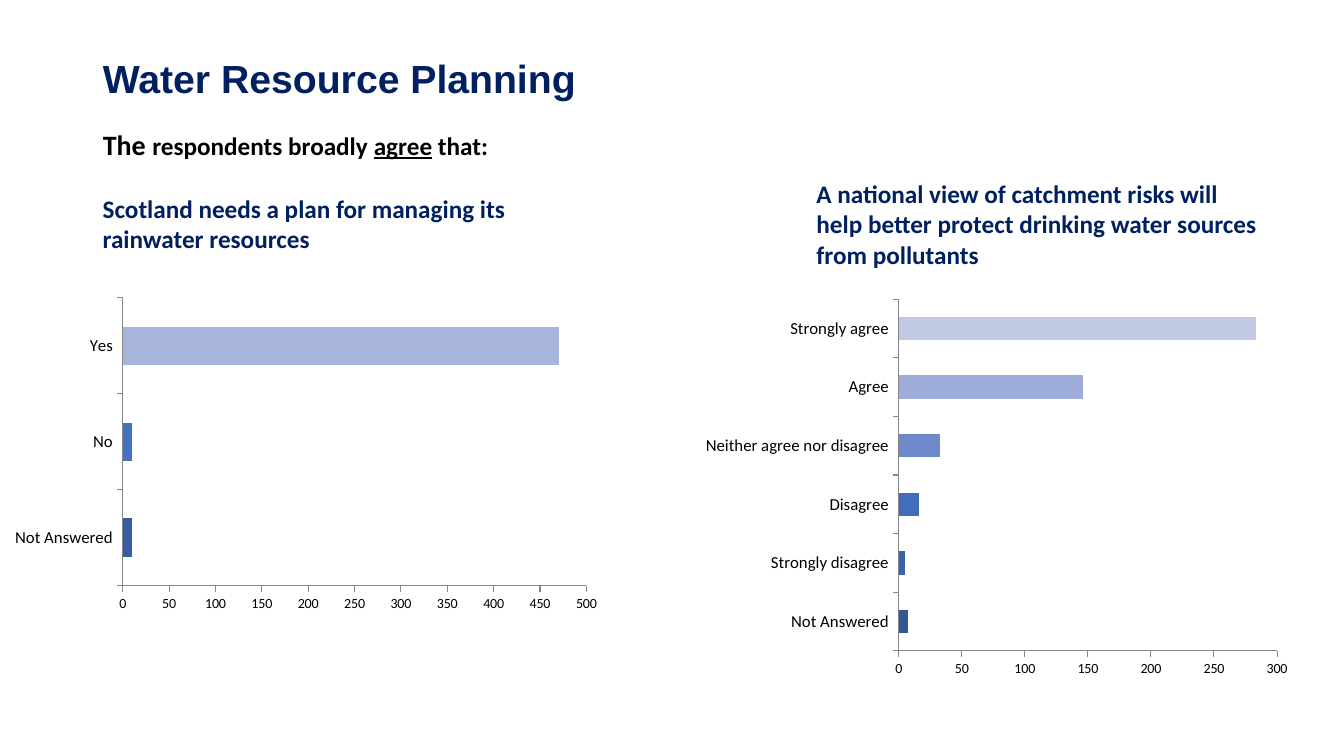
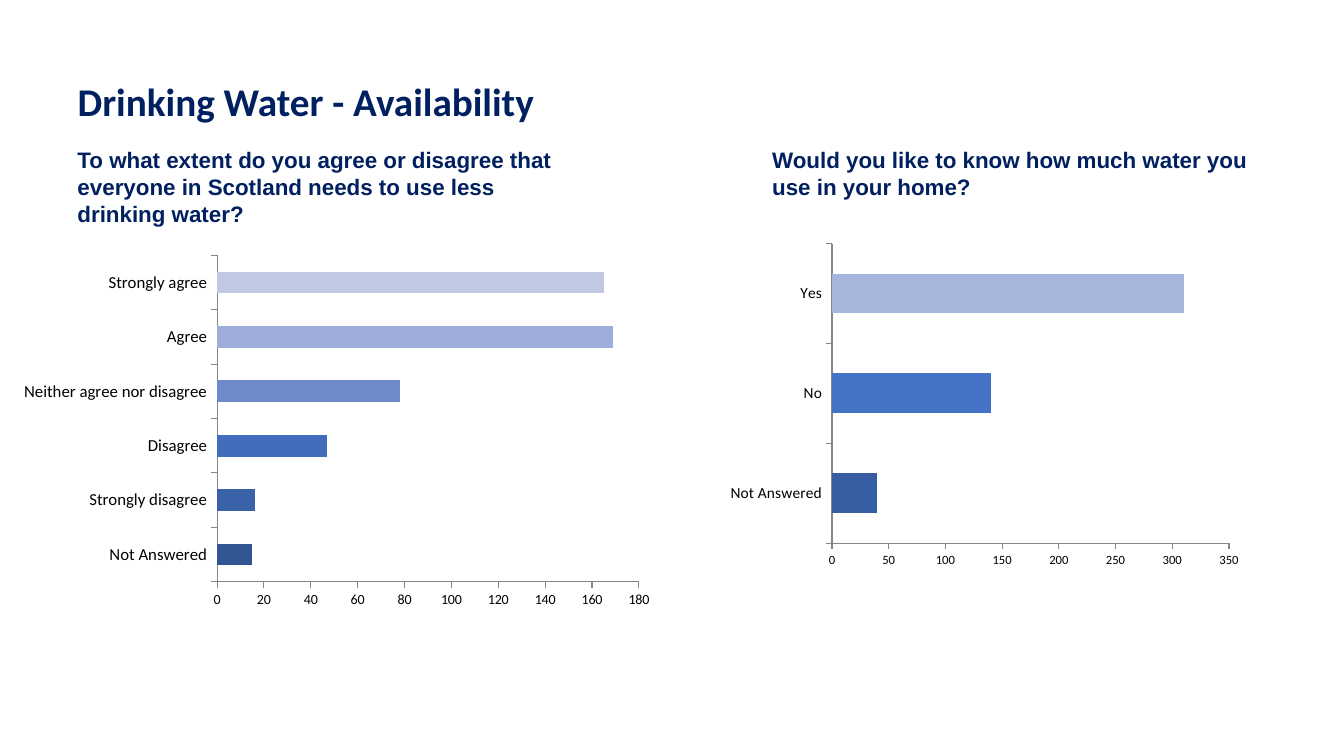
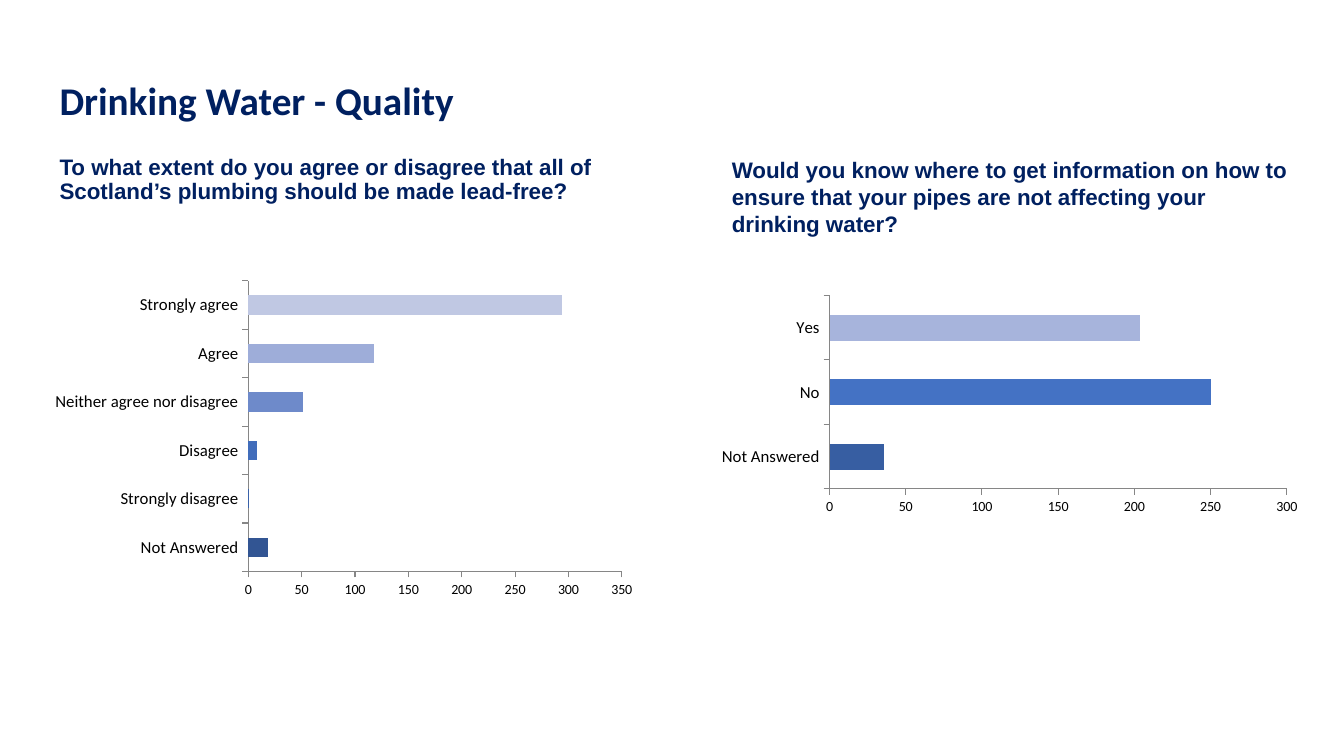
import pptx
import pptx.util
import pptx.oxml
import pptx.oxml.ns
import pptx.chart.data
import pptx.dml.color
import pptx.enum.chart
import pptx.enum.text

Inches, Pt = pptx.util.Inches, pptx.util.Pt
RGB = pptx.dml.color.RGBColor
NAVY = RGB(0x00, 0x20, 0x60)
BLACK = RGB(0x00, 0x00, 0x00)
WHITE = RGB(0xFF, 0xFF, 0xFF)
AXIS_GREY = RGB(0x86, 0x86, 0x86)
CATEGORIES = {
    3: ["Not Answered", "No", "Yes"],
    6: ["Not Answered", "Strongly disagree", "Disagree",
        "Neither agree nor disagree", "Agree", "Strongly agree"],
}
BLUES = {
    3: [RGB(0x37, 0x5E, 0xA2), RGB(0x44, 0x72, 0xC4), RGB(0xA7, 0xB4, 0xDC)],
    6: [RGB(0x32, 0x55, 0x93), RGB(0x3A, 0x62, 0xA9), RGB(0x41, 0x6D, 0xBB),
        RGB(0x6E, 0x8A, 0xCA), RGB(0x9E, 0xAD, 0xD9), RGB(0xC0, 0xC8, 0xE3)],
}
TITLE_ONLY, TITLE_BODY = 5, 1

SLIDES = [
    {
        "title": ("Water Resource Planning", "Arial", (0.92, 0.4, 11.5, 0.8)),
        "body": ((0.92, 1.25, 11.5, 0.93), BLACK, [
            ("The ", {"size": Pt(20), "name": "Calibri"}),
            ("respondents broadly ", {"size": Pt(18), "name": "Calibri"}),
            ("agree", {"size": Pt(18), "name": "Calibri", "underline": True}),
            (" that:", {"size": Pt(18), "name": "Calibri"}),
        ]),
        "questions": [
            ("Scotland needs a plan for managing its rainwater resources",
             "Calibri", 18, (0.92, 1.87, 4.74, 0.71)),
            ("A national view of catchment risks will help better protect "
             "drinking water sources from pollutants",
             "Calibri", 18, (8, 1.72, 4.63, 1.01)),
        ],
        "charts": [
            {"values": [10, 10, 470], "box": (0.03, 2.89, 6.01, 3.24)},
            {"values": [7, 5, 16, 33, 146, 283], "box": (6.88, 2.89, 6.01, 3.9)},
        ],
    },
    {
        "title": ("Drinking Water - Availability", "Calibri", (0.67, 0.4, 12, 1.25)),
        "questions": [
            ("To what extent do you agree or disagree that everyone in Scotland "
             "needs to use less drinking water?",
             "Arial", 16, (0.67, 1.4, 5.11, 0.91)),
            ("Would you like to know how much water you use in your home?",
             "Arial", 16, (7.56, 1.4, 5.11, 0.64)),
        ],
        "charts": [
            {"values": [15, 16, 47, 78, 169, 165], "box": (0.11, 2.46, 6.46, 3.64)},
            {"values": [40, 140, 310], "box": (7.14, 2.35, 5.25, 3.35),
             "sizes": (11, 9)},
        ],
    },
    {
        "title": ("Drinking Water - Quality", "Calibri", (0.49, 0.39, 12, 1.25)),
        "body": ((0.49, 1.5, 5.74, 0.82), NAVY, [
            ("To what extent do you agree or disagree that all of Scotland’s "
             "plumbing should be made lead-free?",
             {"size": Pt(16), "name": "Arial"}),
        ]),
        "questions": [
            ("Would you know where to get information on how to ensure that your "
             "pipes are not affecting your drinking water?",
             "Arial", 16, (7.16, 1.5, 5.74, 0.82)),
        ],
        "charts": [
            {"values": [18, 1, 8, 51, 118, 294], "box": (0.43, 2.72, 5.96, 3.27)},
            {"values": [36, 250, 204], "box": (6.94, 2.8, 6.13, 2.63),
             "plot": {"x": 0.21, "y": 0.05, "w": 0.74, "h": 0.73}},
        ],
    },
]


def place(sp, box):
    for name, value in zip(("left", "top", "width", "height"), box):
        setattr(sp, name, Inches(value))


def write(sp, runs, color, anchor=pptx.enum.text.MSO_ANCHOR.TOP, spacing=1.0):
    tf = sp.text_frame
    for name, value in {"word_wrap": True, "vertical_anchor": anchor,
                        "auto_size": pptx.enum.text.MSO_AUTO_SIZE.NONE}.items():
        setattr(tf, name, value)
    p = tf.paragraphs[0]
    for name, value in {"alignment": pptx.enum.text.PP_ALIGN.LEFT,
                        "line_spacing": spacing, "space_before": Pt(0)}.items():
        setattr(p, name, value)
    for text, style in runs:
        r = p.add_run()
        r.text = text
        for name, value in {"bold": True, **style}.items():
            setattr(r.font, name, value)
        r.font.color.rgb = color
    return p


def add_body(s, box, color, runs):
    sp = s.placeholders[1]
    place(sp, box)
    p = write(sp, runs, color, spacing=0.9)
    pPr = p._p.get_or_add_pPr()
    pPr.set("marL", "0")
    pPr.set("indent", "0")
    pPr.append(pptx.oxml.parse_xml(
        f'<a:buNone {pptx.oxml.ns.nsdecls("a")}/>'))


def set_plot_area(chart, plot):
    area = chart._chartSpace.chart.plotArea
    for layout in area.findall(pptx.oxml.ns.qn("c:layout")):
        area.remove(layout)
    sizes = "".join(f'<c:{k} val="{v}"/>' for k, v in plot.items())
    area.insert(0, pptx.oxml.parse_xml(
        f'<c:layout {pptx.oxml.ns.nsdecls("c")}><c:manualLayout>'
        '<c:layoutTarget val="inner"/><c:xMode val="edge"/><c:yMode val="edge"/>'
        f'{sizes}</c:manualLayout></c:layout>'))


def add_bar_chart(s, values, box, sizes=(12, 10), plot=None):
    count = len(values)
    data = pptx.chart.data.CategoryChartData()
    data.categories = CATEGORIES[count]
    data.add_series("Series 1", values)
    chart = s.shapes.add_chart(pptx.enum.chart.XL_CHART_TYPE.BAR_CLUSTERED,
                               *map(Inches, box), data).chart
    chart.has_title = chart.has_legend = False
    for name, value in {"size": Pt(18), "name": "Calibri"}.items():
        setattr(chart.font, name, value)
    chart.font.color.rgb = BLACK
    for axis, size in zip((chart.category_axis, chart.value_axis), sizes):
        for name, value in {
                "has_major_gridlines": False,
                "major_tick_mark": pptx.enum.chart.XL_TICK_MARK.OUTSIDE,
                "minor_tick_mark": pptx.enum.chart.XL_TICK_MARK.NONE}.items():
            setattr(axis, name, value)
        axis.tick_labels.font.size = Pt(size)
        axis.format.line.color.rgb = AXIS_GREY
        axis.format.line.width = Pt(0.75)
    chart.value_axis.minimum_scale = 0
    bars = chart.plots[0]
    bars.gap_width = 150
    bars.vary_by_categories = True
    for i, color in enumerate(BLUES[count]):
        fill = bars.series[0].points[i].format.fill
        fill.solid()
        fill.fore_color.rgb = color
    if plot:
        set_plot_area(chart, plot)


def main():
    prs = pptx.Presentation()
    prs.slide_width, prs.slide_height = Inches(13.33), Inches(7.5)
    background = prs.slide_master.background.fill
    background.solid()
    background.fore_color.rgb = WHITE
    for content in SLIDES:
        layout = TITLE_BODY if "body" in content else TITLE_ONLY
        s = prs.slides.add_slide(prs.slide_layouts[layout])
        text, font, box = content["title"]
        place(s.shapes.title, box)
        write(s.shapes.title, [(text, {"size": Pt(28), "name": font})], NAVY,
              pptx.enum.text.MSO_ANCHOR.MIDDLE, 0.9)
        if "body" in content:
            add_body(s, *content["body"])
        for text, font, size, box in content["questions"]:
            sp = s.shapes.add_textbox(*map(Inches, box))
            write(sp, [(text, {"size": Pt(size), "name": font})], NAVY)
        for chart in content["charts"]:
            add_bar_chart(s, **chart)
    prs.save("out.pptx")


if __name__ == "__main__":
    main()
